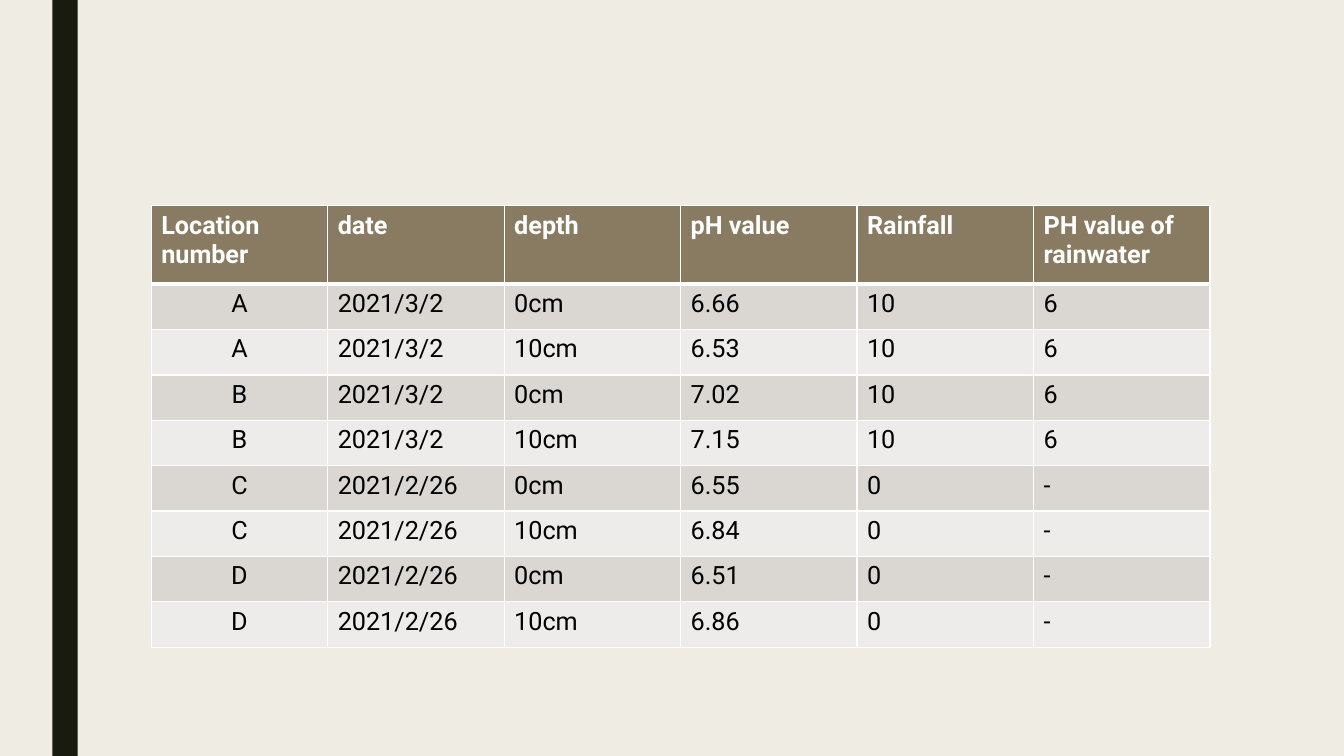
import pptx
import pptx.dml.color
import pptx.enum.shapes
import pptx.enum.text
import pptx.oxml.ns
import pptx.util
from lxml import etree

Inches = pptx.util.Inches
Pt = pptx.util.Pt

COLORS = {
    "background": "EFEDE3",
    "stripe": "191B0E",
    "header": "897B61",
    "odd_row": "DAD7D2",
    "even_row": "EDECEA",
    "border": "FFFFFF",
    "header_text": "FFFFFF",
    "body_text": "000000",
}

HEADINGS = ["Location number", "date", "depth", "pH value", "Rainfall", "PH value of rainwater"]
RAINY_DAY = ("2021/3/2", "10", "6")
DRY_DAY = ("2021/2/26", "0", "-")
LOCATIONS = [
    ("A", RAINY_DAY, "6.66", "6.53"),
    ("B", RAINY_DAY, "7.02", "7.15"),
    ("C", DRY_DAY, "6.55", "6.84"),
    ("D", DRY_DAY, "6.51", "6.86"),
]


def measurement_rows():
    rows = []
    for location, (date, rainfall, rain_ph), surface_ph, deep_ph in LOCATIONS:
        for depth, soil_ph in (("0cm", surface_ph), ("10cm", deep_ph)):
            rows.append([location, date, depth, soil_ph, rainfall, rain_ph])
    return rows


class SlideBuilder:
    font = "Roboto"
    size = 18

    def __init__(self, slide):
        self.slide = slide

    def color(self, key):
        return pptx.dml.color.RGBColor.from_string(COLORS[key])

    def paint(self, fill, key):
        fill.solid()
        fill.fore_color.rgb = self.color(key)

    def background(self, key):
        self.paint(self.slide.background.fill, key)

    def bar(self, left, top, width, height, key):
        stripe = self.slide.shapes.add_shape(
            pptx.enum.shapes.MSO_SHAPE.RECTANGLE,
            Inches(left), Inches(top), Inches(width), Inches(height))
        stripe.shadow.inherit = False
        stripe.line.fill.background()
        self.paint(stripe.fill, key)

    def borders(self, cell, top, bottom):
        properties = cell._tc.get_or_add_tcPr()
        for side, width in (("L", 1), ("R", 1), ("T", top), ("B", bottom)):
            line = etree.SubElement(properties, pptx.oxml.ns.qn(f"a:ln{side}"), w=str(Pt(width)))
            solid = etree.SubElement(line, pptx.oxml.ns.qn("a:solidFill"))
            etree.SubElement(solid, pptx.oxml.ns.qn("a:srgbClr"), val=COLORS["border"])

    def cell(self, cell, text, fill, text_color, bold, centered):
        self.paint(cell.fill, fill)
        paragraph = cell.text_frame.paragraphs[0]
        if centered:
            paragraph.alignment = pptx.enum.text.PP_ALIGN.CENTER
        run = paragraph.add_run()
        run.text = text
        run.font.name = self.font
        run.font.size = Pt(self.size)
        run.font.bold = bold
        run.font.color.rgb = self.color(text_color)

    def table(self, left, top, column_width, header_height, row_height, rows):
        width = column_width * len(rows[0])
        height = header_height + row_height * (len(rows) - 1)
        grid = self.slide.shapes.add_table(
            len(rows), len(rows[0]),
            Inches(left), Inches(top), Inches(width), Inches(height)).table
        for column in grid.columns:
            column.width = Inches(column_width)
        for r, values in enumerate(rows):
            header = r == 0
            grid.rows[r].height = Inches(header_height if header else row_height)
            fill = "header" if header else "odd_row" if r % 2 else "even_row"
            text_color = "header_text" if header else "body_text"
            for c, text in enumerate(values):
                cell = grid.cell(r, c)
                self.borders(cell, top=3 if r == 1 else 1, bottom=3 if header else 1)
                self.cell(cell, text, fill, text_color, header, c == 0 and not header)


def main():
    presentation = pptx.Presentation()
    presentation.slide_width = Inches(13.33)
    presentation.slide_height = Inches(7.5)
    builder = SlideBuilder(presentation.slides.add_slide(presentation.slide_layouts[6]))
    builder.background("background")
    builder.bar(0.52, 0, 0.25, 7.5, "stripe")
    builder.table(1.5, 2.04, 1.75, 0.78, 0.45, [HEADINGS] + measurement_rows())
    presentation.save("out.pptx")


if __name__ == "__main__":
    main()
